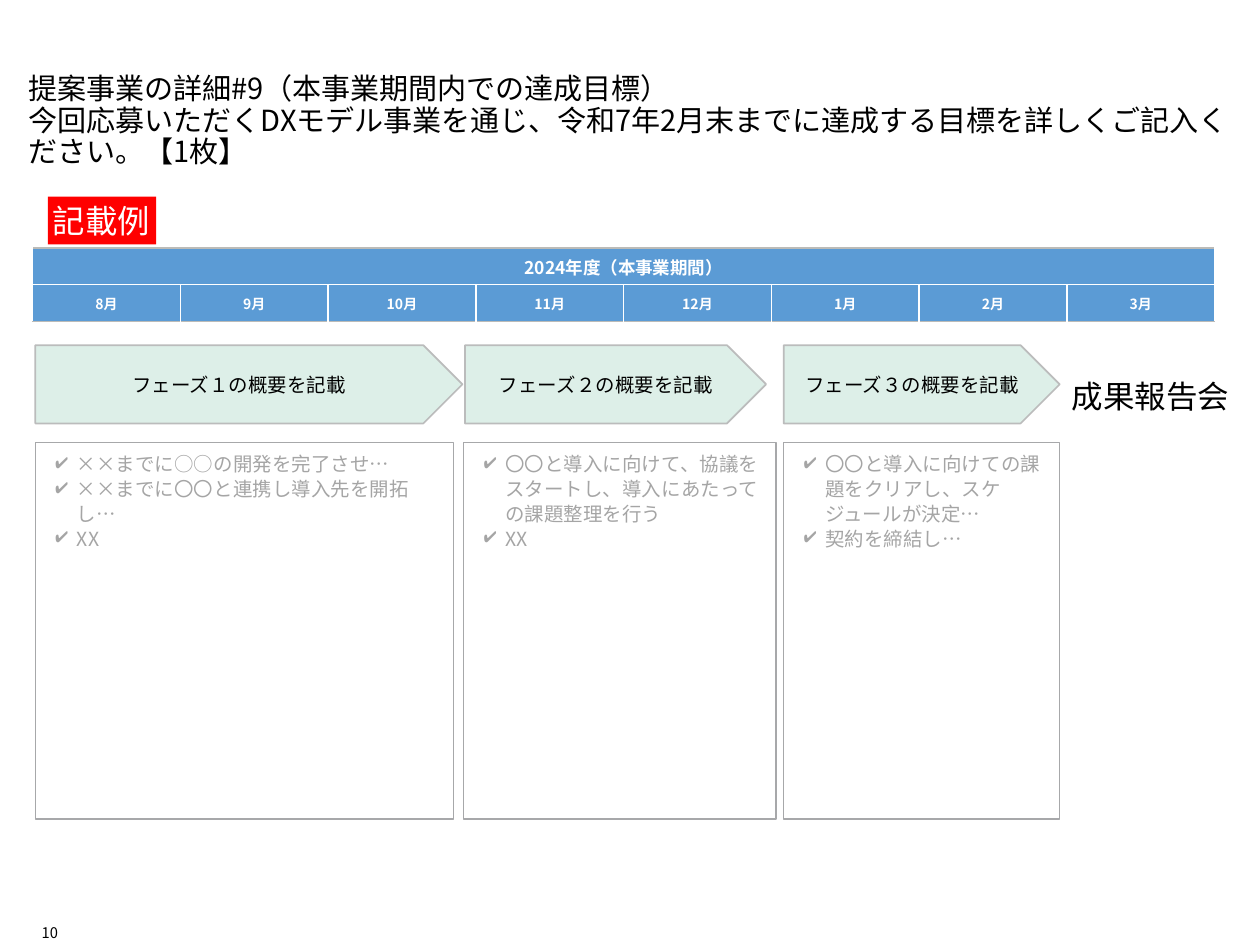
from lxml.etree import SubElement
from pptx import Presentation
from pptx.dml.color import RGBColor
from pptx.enum.shapes import MSO_SHAPE as Shape
from pptx.enum.text import MSO_ANCHOR as Anchor, PP_ALIGN as Align
from pptx.oxml import parse_xml
from pptx.oxml.ns import nsdecls, qn
from pptx.util import Inches, Pt

BLACK = RGBColor(0x00, 0x00, 0x00)
WHITE = RGBColor(0xFF, 0xFF, 0xFF)
RED = RGBColor(0xFF, 0x00, 0x00)
BLUE = RGBColor(0x5B, 0x9B, 0xD5)
MINT = RGBColor(0xDD, 0xEF, 0xE8)
ARROW_EDGE = RGBColor(0xBB, 0xBC, 0xBC)
PANEL_EDGE = RGBColor(0xA7, 0xA8, 0xAA)
NOTE_GRAY = RGBColor(0xA5, 0xA5, 0xA5)
TABLE_EDGE = RGBColor(0xBB, 0xBB, 0xB8)
FONT = "Noto Sans CJK JP"

TITLE = ("提案事業の詳細#9（本事業期間内での達成目標）\v"
         "今回応募いただくDXモデル事業を通じ、令和7年2月末までに達成する目標を詳しくご記入ください。【1枚】")
EXAMPLE_TAG = "記載例"
YEAR = "2024年度（本事業期間）"
MONTHS = ["8月", "9月", "10月", "11月", "12月", "1月", "2月", "3月"]
PHASES = [
    {"name": "フェーズ１の概要を記載", "arrow": (0.28, 3.39), "panel": (0.28, 3.32),
     "goals": ["××までに○○の開発を完了させ…", "××までに〇〇と連携し導入先を開拓し…", "XX"]},
    {"name": "フェーズ２の概要を記載", "arrow": (3.69, 2.39), "panel": (3.68, 2.48),
     "goals": ["〇〇と導入に向けて、協議をスタートし、導入にあたっての課題整理を行う", "XX"]},
    {"name": "フェーズ３の概要を記載", "arrow": (6.22, 2.19), "panel": (6.22, 2.19),
     "goals": ["〇〇と導入に向けての課題をクリアし、スケジュールが決定…", "契約を締結し…"]},
]
CLOSING = "成果報告会"
PAGE = "10"

TABLE_LEFT, TABLE_TOP, TABLE_WIDTH, ROW_HEIGHT = 0.26, 1.97, 9.38, 0.29
ARROW_TOP, ARROW_HEIGHT = 2.74, 0.62
PANEL_TOP, PANEL_HEIGHT = 3.51, 2.99


def write(frame, lines, size, color=BLACK, font=FONT, bold=False, align=Align.LEFT,
          anchor=Anchor.TOP, inset=(0, 0), spacing=None, check=False, wrap=True):
    frame.word_wrap = wrap
    frame.vertical_anchor = anchor
    frame.margin_left = frame.margin_right = Inches(inset[0])
    frame.margin_top = frame.margin_bottom = Inches(inset[1])
    frame.text = "\n".join(lines)
    for paragraph in frame.paragraphs:
        paragraph.alignment = align
        if spacing:
            paragraph.line_spacing = spacing
        if check:
            add_check(paragraph, color)
        for run in paragraph.runs:
            run.font.name = font
            run.font.size = Pt(size)
            run.font.bold = bold
            run.font.color.rgb = color
            SubElement(run.font._element, qn("a:ea")).set("typeface", FONT)


def add_check(paragraph, color):
    props = paragraph._p.get_or_add_pPr()
    props.set("marL", str(Inches(0.26)))
    props.set("indent", str(Inches(-0.17)))
    bullet_color = SubElement(props, qn("a:buClr"))
    SubElement(bullet_color, qn("a:srgbClr")).set("val", str(color))
    SubElement(props, qn("a:buChar")).set("char", "✔")


def add_block(slide, kind, box, fill, edge=None, edge_width=1):
    block = slide.shapes.add_shape(kind, *map(Inches, box))
    block.shadow.inherit = False
    block.fill.solid()
    block.fill.fore_color.rgb = fill
    if edge is None:
        block.line.fill.background()
    else:
        block.line.color.rgb = edge
        block.line.width = Pt(edge_width)
    return block.text_frame


def add_label(slide, box):
    return slide.shapes.add_textbox(*map(Inches, box)).text_frame


def style_cell(cell, text, size, top, bottom):
    write(cell.text_frame, [text], size, WHITE, bold=True, align=Align.CENTER, spacing=1.06)
    cell.vertical_anchor = Anchor.MIDDLE
    cell.margin_left = cell.margin_right = Inches(0.04)
    cell.margin_top = cell.margin_bottom = 0
    cell.fill.solid()
    cell.fill.fore_color.rgb = BLUE
    borders = [("L", WHITE), ("R", WHITE), ("T", top), ("B", bottom)]
    for place, (side, color) in enumerate(borders):
        cell._tc.get_or_add_tcPr().insert(place, parse_xml(
            f'<a:ln{side} {nsdecls("a")} w="{Pt(1)}"><a:solidFill>'
            f'<a:srgbClr val="{color}"/></a:solidFill></a:ln{side}>'))


def add_calendar(slide):
    table = slide.shapes.add_table(
        2, len(MONTHS), Inches(TABLE_LEFT), Inches(TABLE_TOP),
        Inches(TABLE_WIDTH), Inches(2 * ROW_HEIGHT)).table
    for row in table.rows:
        row.height = Inches(ROW_HEIGHT)
    table.cell(0, 0).merge(table.cell(0, len(MONTHS) - 1))
    style_cell(table.cell(0, 0), YEAR, 10, TABLE_EDGE, WHITE)
    for column, month in enumerate(MONTHS):
        table.columns[column].width = Inches(TABLE_WIDTH / len(MONTHS))
        style_cell(table.cell(1, column), month, 8, WHITE, TABLE_EDGE)


def add_phase(slide, phase):
    left, width = phase["arrow"]
    arrow = add_block(slide, Shape.PENTAGON, (left, ARROW_TOP, width, ARROW_HEIGHT),
                      MINT, ARROW_EDGE)
    write(arrow, [phase["name"]], 11.1, align=Align.CENTER, anchor=Anchor.MIDDLE)
    left, width = phase["panel"]
    panel = add_block(slide, Shape.RECTANGLE, (left, PANEL_TOP, width, PANEL_HEIGHT),
                      WHITE, PANEL_EDGE, 0.75)
    write(panel, phase["goals"], 11.1, NOTE_GRAY, inset=(0.07, 0.07), spacing=1.06, check=True)


def main():
    deck = Presentation()
    deck.slide_width, deck.slide_height = Inches(10), Inches(7.5)
    slide = deck.slides.add_slide(deck.slide_layouts[6])
    write(add_label(slide, (0.23, 0.29, 9.55, 1.05)), [TITLE], 16.6,
          anchor=Anchor.BOTTOM, spacing=0.9)
    add_calendar(slide)
    for phase in PHASES:
        add_phase(slide, phase)
    tag = add_block(slide, Shape.RECTANGLE, (0.38, 1.56, 0.86, 0.38), RED)
    write(tag, [EXAMPLE_TAG], 18.5, WHITE, anchor=Anchor.MIDDLE, inset=(0.04, 0.04), wrap=False)
    write(add_label(slide, (0.28, 7.29, 0.18, 0.18)), [PAGE], 8.4,
          align=Align.RIGHT, anchor=Anchor.BOTTOM)
    write(add_label(slide, (8.41, 2.94, 1.46, 0.4)), [CLOSING], 18, font="Calibri",
          inset=(0.1, 0.05), wrap=False)
    deck.save("out.pptx")


if __name__ == "__main__":
    main()
